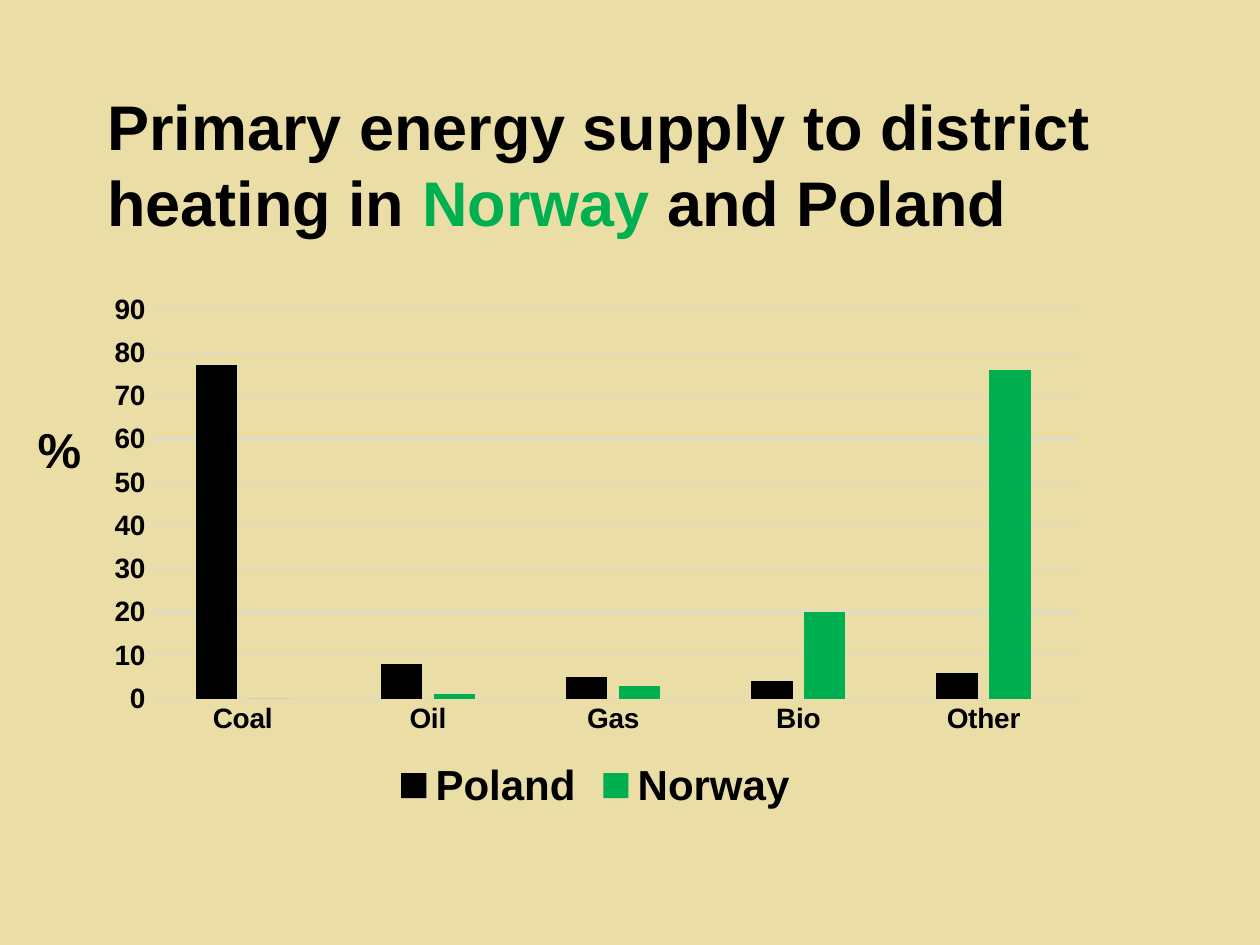
from dataclasses import dataclass

from pptx import Presentation
from pptx.chart.data import CategoryChartData
from pptx.dml.color import RGBColor as RGB
from pptx.enum.chart import XL_CHART_TYPE as CT, XL_LEGEND_POSITION as LP, XL_TICK_MARK as TM
from pptx.enum.text import MSO_ANCHOR as ANCHOR, MSO_AUTO_SIZE as FIT, PP_ALIGN as ALIGN
from pptx.util import Inches, Pt


@dataclass(frozen=True)
class Theme:
    font: str = "Arial"
    background: RGB = RGB(0xEA, 0xDE, 0xA6)
    text: RGB = RGB(0, 0, 0)
    poland: RGB = RGB(0, 0, 0)
    norway: RGB = RGB(0x00, 0xB0, 0x50)
    grid: RGB = RGB(0xD9, 0xD9, 0xD9)
    title_size: int = 36
    unit_size: int = 28
    legend_size: int = 24
    axis_size: int = 16


def set_all(obj, values):
    for name, value in values.items():
        setattr(obj, name, value)


class SlideBuilder:
    def __init__(self, prs, theme):
        self.theme = theme
        self.slide = prs.slides.add_slide(prs.slide_layouts[5])
        fill = self.slide.background.fill
        fill.solid()
        fill.fore_color.rgb = theme.background

    def format_font(self, font, size, color=None):
        set_all(font, {"name": self.theme.font, "size": Pt(size), "bold": True})
        font.color.rgb = color or self.theme.text

    def fill_text(self, tf, runs, size, align):
        """Write (text, color) runs into the first paragraph."""
        p = tf.paragraphs[0]
        p.alignment = align
        for text, color in runs:
            r = p.add_run()
            r.text = text
            self.format_font(r.font, size, color)

    def title(self, box, runs):
        sp = self.slide.shapes.title
        set_all(sp, dict(zip(("left", "top", "width", "height"), map(Inches, box))))
        tf = sp.text_frame
        set_all(tf, {"word_wrap": True, "auto_size": FIT.NONE,
                     "vertical_anchor": ANCHOR.MIDDLE})
        self.fill_text(tf, runs, self.theme.title_size, ALIGN.LEFT)

    def label(self, box, text, size):
        tf = self.slide.shapes.add_textbox(*map(Inches, box)).text_frame
        set_all(tf, {"word_wrap": True, "auto_size": FIT.SHAPE_TO_FIT_TEXT})
        self.fill_text(tf, [(text, self.theme.text)], size, ALIGN.CENTER)

    def format_line(self, line):
        line.color.rgb = self.theme.grid
        line.width = Pt(0.75)

    def column_chart(self, box, categories, series):
        """Draw clustered columns from (name, values, color) series."""
        data = CategoryChartData()
        data.categories = categories
        for name, values, _ in series:
            data.add_series(name, values)
        chart = self.slide.shapes.add_chart(
            CT.COLUMN_CLUSTERED, *map(Inches, box), data).chart
        chart.has_title = False
        chart.font.name = self.theme.font
        chart.has_legend = True
        set_all(chart.legend, {"position": LP.BOTTOM, "include_in_layout": False})
        self.format_font(chart.legend.font, self.theme.legend_size)

        plot = chart.plots[0]
        set_all(plot, {"gap_width": 219, "overlap": -27, "vary_by_categories": False})
        for bars, (_, _, color) in zip(plot.series, series):
            bars.invert_if_negative = False
            bars.format.fill.solid()
            bars.format.fill.fore_color.rgb = color

        for axis in (chart.category_axis, chart.value_axis):
            set_all(axis, {"major_tick_mark": TM.NONE, "minor_tick_mark": TM.NONE})
            self.format_font(axis.tick_labels.font, self.theme.axis_size)
        self.format_line(chart.category_axis.format.line)
        value_axis = chart.value_axis
        set_all(value_axis, {"minimum_scale": 0, "maximum_scale": 90, "major_unit": 10,
                             "has_major_gridlines": True})
        value_axis.format.line.fill.background()
        self.format_line(value_axis.major_gridlines.format.line)


def main():
    prs = Presentation()
    set_all(prs, {"slide_width": Inches(10), "slide_height": Inches(7.5)})
    theme = Theme()
    s = SlideBuilder(prs, theme)
    s.title((0.75, 0.67, 8.5, 1.25), [
        ("Primary energy supply to district heating in ", theme.text),
        ("Norway", theme.norway),
        (" and Poland", theme.text),
    ])
    s.column_chart((0.75, 2.25, 7.95, 4.24), ["Coal", "Oil", "Gas", "Bio", "Other"], [
        ("Poland", (77, 8, 5, 4, 6), theme.poland),
        ("Norway", (0, 1, 3, 20, 76), theme.norway),
    ])
    s.label((0.2, 3.28, 0.47, 0.57), "%", theme.unit_size)
    prs.save("out.pptx")


if __name__ == "__main__":
    main()
